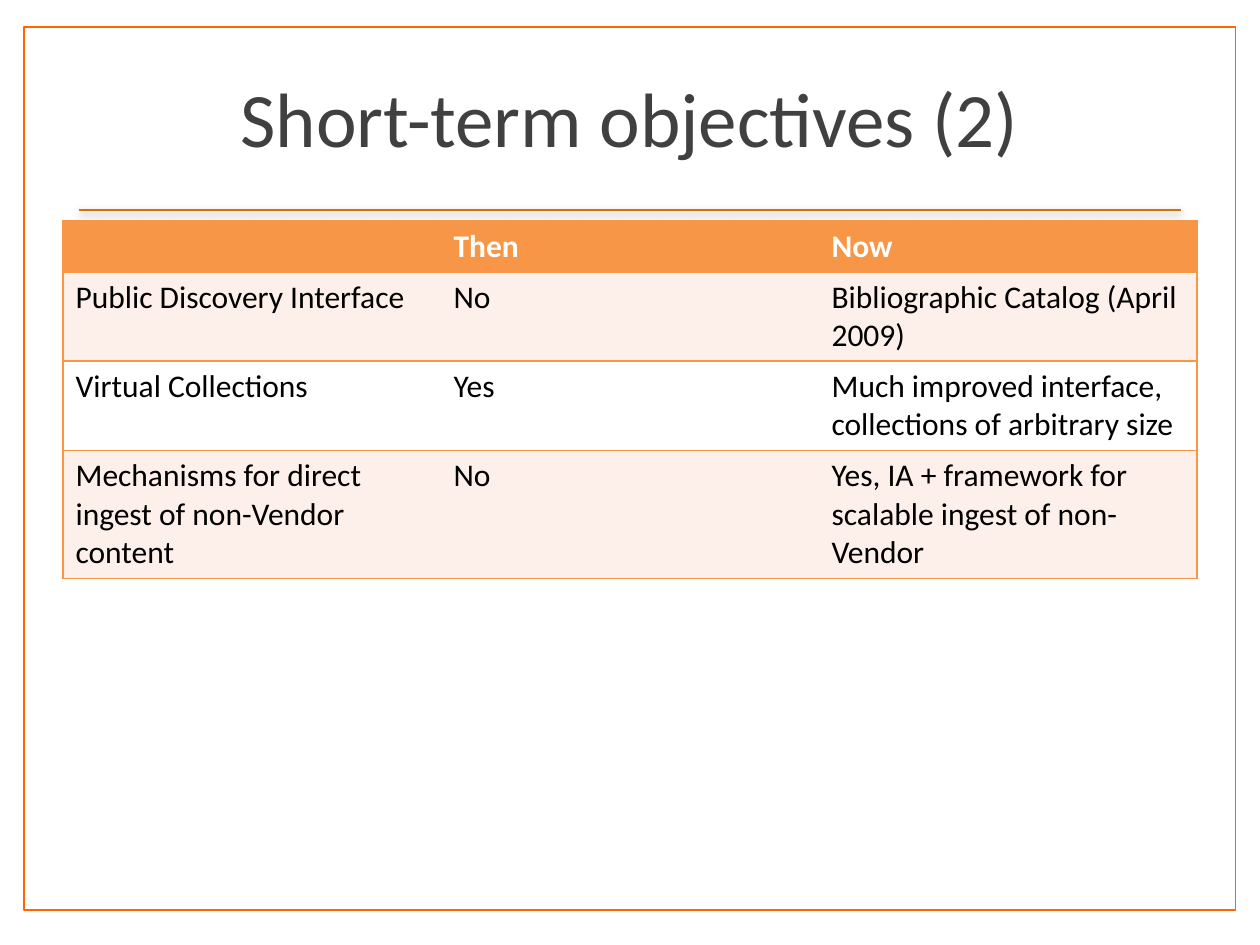
from lxml import etree
from pptx import Presentation
from pptx.dml.color import RGBColor
from pptx.enum.shapes import MSO_CONNECTOR, MSO_SHAPE
from pptx.enum.text import MSO_ANCHOR, PP_ALIGN
from pptx.oxml import parse_xml
from pptx.oxml.ns import nsdecls, qn
from pptx.util import Cm, Pt

STRAIGHT = MSO_CONNECTOR.STRAIGHT
RECTANGLE = MSO_SHAPE.RECTANGLE
MIDDLE = MSO_ANCHOR.MIDDLE
CENTER = PP_ALIGN.CENTER
BLANK_LAYOUT = 6


def color(hex_text):
    return RGBColor.from_string(hex_text)


class ObjectivesSlide:
    FONT = "Calibri"
    WHITE, BLACK, GREY = "FFFFFF", "000000", "404040"
    FRAME, RULE = "FF6600", "D57007"
    ORANGE, TINT = "F79646", "FDEFE9"

    def __init__(self, deck):
        self.shapes = deck.slides.add_slide(deck.slide_layouts[BLANK_LAYOUT]).shapes

    def style(self, paragraph, size, hex_text, bold=False):
        font = paragraph.font
        font.name, font.size, font.bold = self.FONT, Pt(size), bold
        font.color.rgb = color(hex_text)

    def frame(self, left, top, width, height):
        border = self.shapes.add_shape(RECTANGLE, Cm(left), Cm(top), Cm(width), Cm(height))
        border.shadow.inherit = False
        border.fill.solid()
        border.fill.fore_color.rgb = color(self.WHITE)
        border.line.color.rgb = color(self.FRAME)
        border.line.width = Pt(1)

    def rule(self, left, right, y):
        divider = self.shapes.add_connector(STRAIGHT, Cm(left), Cm(y), Cm(right), Cm(y))
        divider.line.color.rgb = color(self.RULE)
        divider.line.width = Pt(1)
        # Soft shadow straight below the line
        divider._element.spPr.append(parse_xml(
            f'<a:effectLst {nsdecls("a")}>'
            f'<a:outerShdw blurRad="{Pt(5)}" dist="{Pt(1.8)}" dir="5400000" rotWithShape="0">'
            f'<a:srgbClr val="{self.BLACK}"><a:alpha val="35000"/></a:srgbClr>'
            '</a:outerShdw></a:effectLst>'))

    def title(self, text, left, top, width, height):
        heading = self.shapes.add_textbox(Cm(left), Cm(top), Cm(width), Cm(height)).text_frame
        heading.word_wrap = True
        heading.vertical_anchor = MIDDLE
        heading.text = text
        heading.paragraphs[0].alignment = CENTER
        self.style(heading.paragraphs[0], 44, self.GREY)

    def cell_borders(self, cell, visible_sides):
        properties = cell._tc.get_or_add_tcPr()
        for position, side in enumerate("LRTB"):
            border = etree.Element(qn(f"a:ln{side}"), w=str(Pt(1)))
            if side in visible_sides:
                paint = etree.SubElement(border, qn("a:solidFill"))
                etree.SubElement(paint, qn("a:srgbClr"), val=self.ORANGE)
            else:
                etree.SubElement(border, qn("a:noFill"))
            properties.insert(position, border)

    def table(self, rows, left, top, column_width, row_heights):
        columns = len(rows[0])
        grid = self.shapes.add_table(len(rows), columns, Cm(left), Cm(top),
                                     Cm(column_width * columns), Cm(sum(row_heights))).table
        for column in grid.columns:
            column.width = Cm(column_width)
        for r, texts in enumerate(rows):
            grid.rows[r].height = Cm(row_heights[r])
            header = r == 0
            band = self.ORANGE if header else self.TINT if r % 2 else self.WHITE
            for c, text in enumerate(texts):
                cell = grid.cell(r, c)
                cell.text = text
                self.style(cell.text_frame.paragraphs[0], 18,
                           self.WHITE if header else self.BLACK, header)
                cell.fill.solid()
                cell.fill.fore_color.rgb = color(band)
                outer = "L" if c == 0 else "R" if c == columns - 1 else ""
                self.cell_borders(cell, "TB" + outer)


def main():
    deck = Presentation()
    deck.slide_width, deck.slide_height = Cm(25.4), Cm(19.05)
    slide = ObjectivesSlide(deck)

    # Page frame and title
    slide.frame(0.49, 0.55, 24.42, 17.8)
    slide.rule(1.59, 23.81, 4.24)
    slide.title("Short-term objectives (2)", 1.27, 0.76, 22.86, 3.18)

    # Comparison of objectives
    objectives = [
        ("", "Then", "Now"),
        ("Public Discovery Interface", "No", "Bibliographic Catalog (April 2009)"),
        ("Virtual Collections", "Yes",
         "Much improved interface, collections of arbitrary size"),
        ("Mechanisms for direct ingest of non-Vendor content", "No",
         "Yes, IA + framework for scalable ingest of non-Vendor"),
    ]
    slide.table(objectives, 1.27, 4.45, 7.62, [1.03, 1.8, 1.8, 2.58])

    deck.save("out.pptx")


if __name__ == "__main__":
    main()
